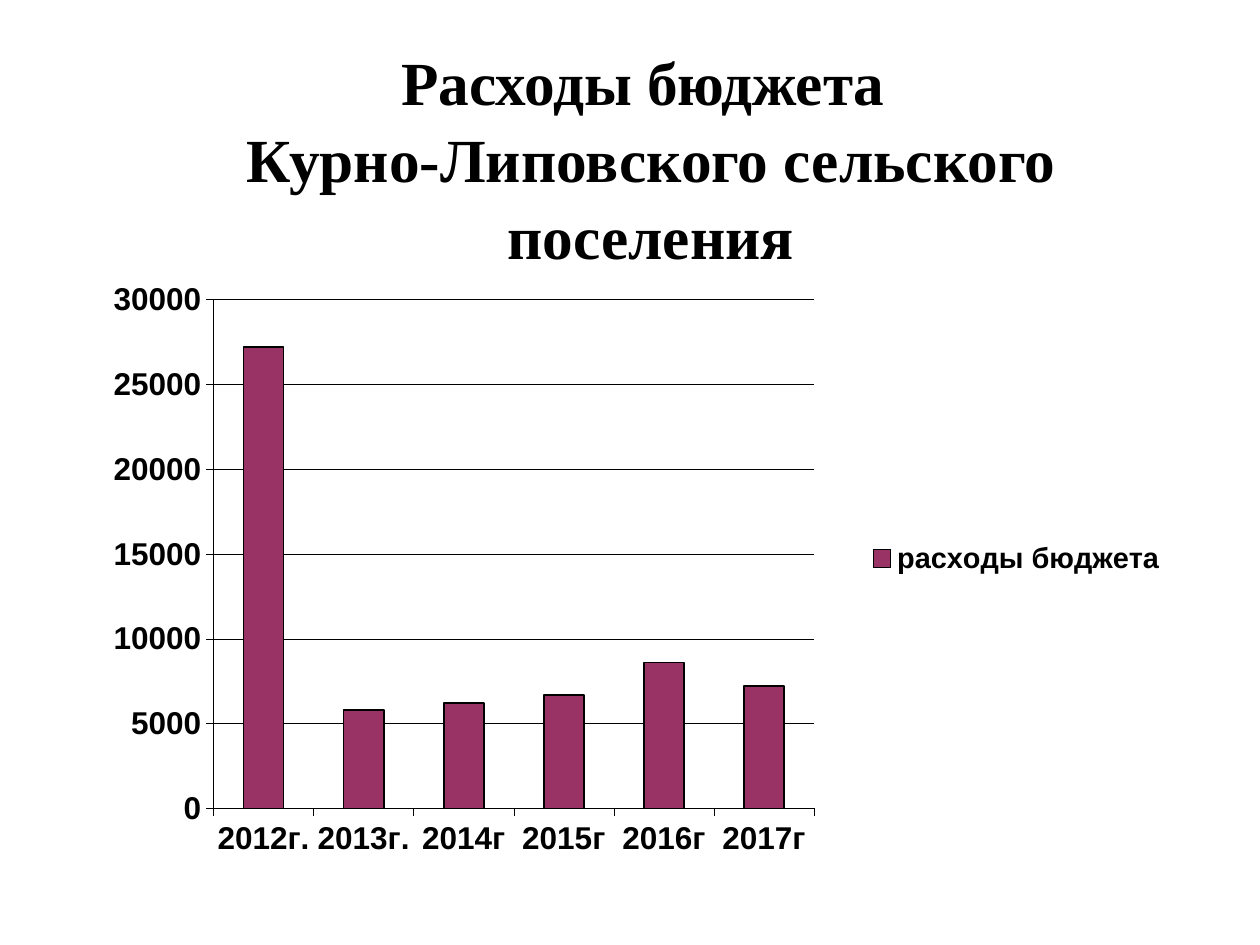
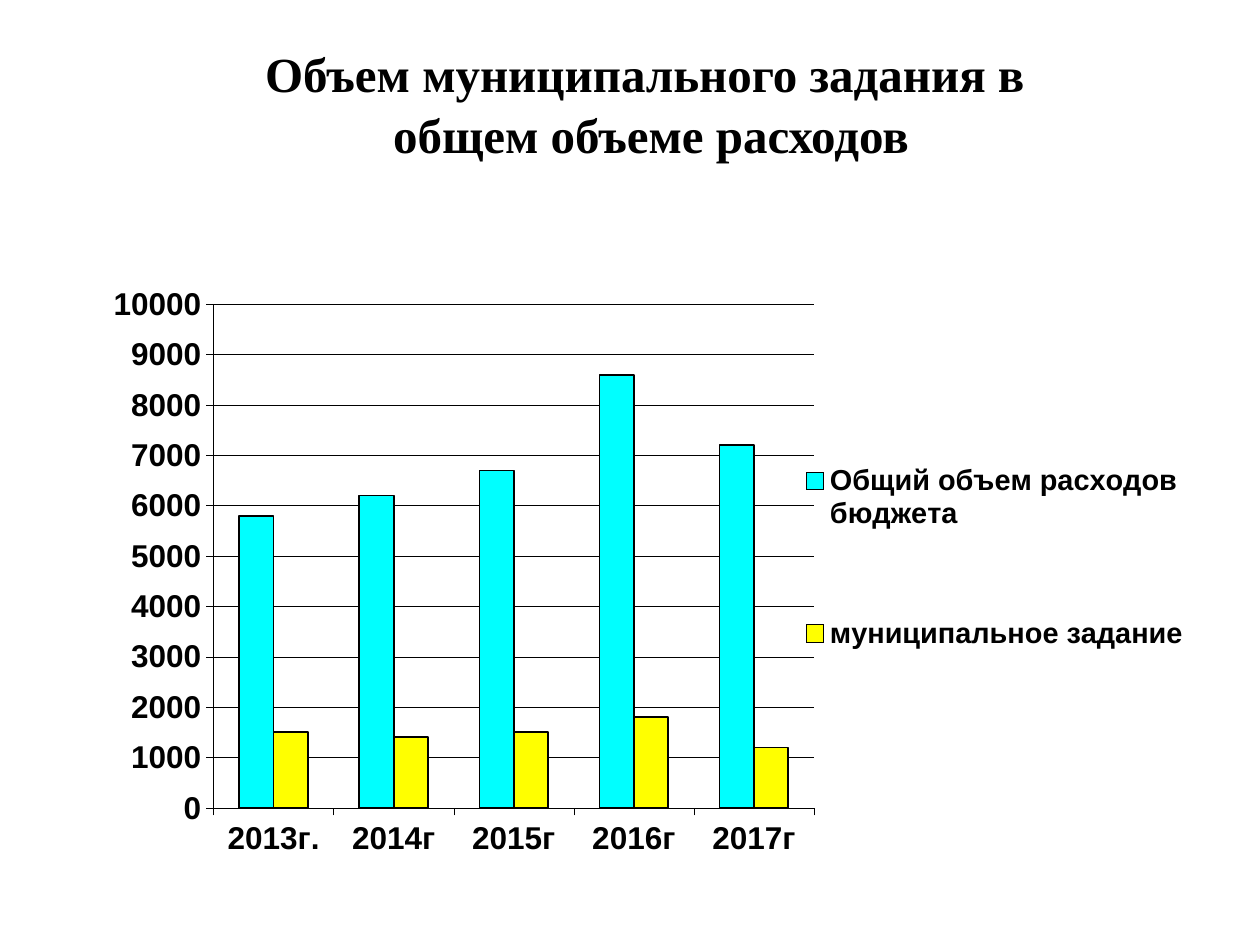
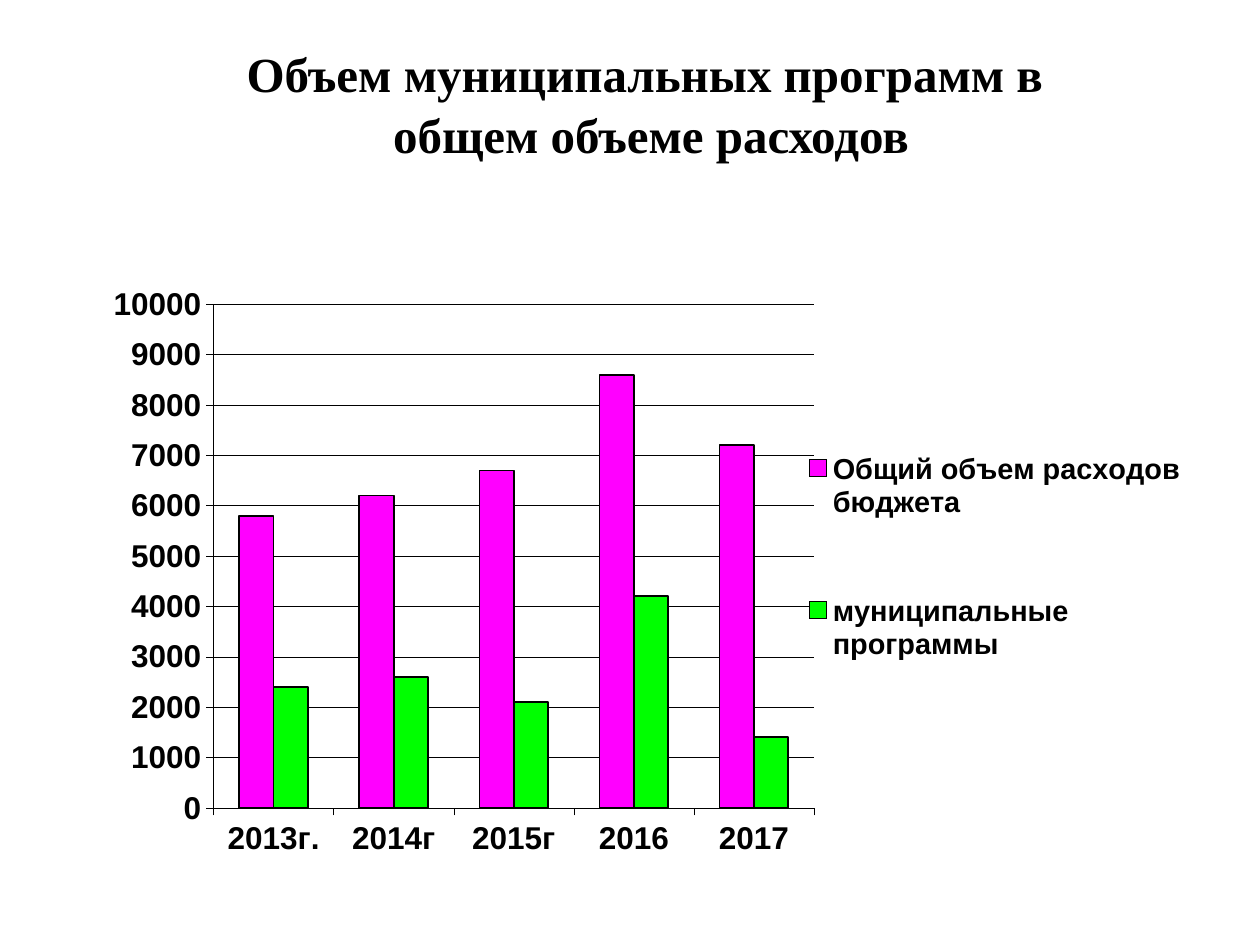
from pptx import Presentation
from pptx.chart.data import CategoryChartData as Data
from pptx.dml.color import RGBColor as Rgb
from pptx.enum.chart import (XL_CHART_TYPE as Kind, XL_LEGEND_POSITION as Side,
                             XL_TICK_LABEL_POSITION as Label, XL_TICK_MARK as Tick)
from pptx.enum.text import MSO_ANCHOR as Anchor, PP_ALIGN as Align
from pptx.oxml import parse_xml
from pptx.oxml.ns import nsdecls
from pptx.util import Pt

HUES = {"ink": "000000", "plum": "993366", "cyan": "00FFFF",
        "yellow": "FFFF00", "pink": "FF00FF", "green": "00FF00"}
HEAD, BODY = "Times New Roman", "Arial"
CHART = (46, 157.5, 639, 348.5)
TOTAL = ("Общий объем расходов бюджета", [5800, 6200, 6700, 8600, 7200])
PAIR = {"top": 10000, "step": 1000, "plot": (0.119, 0.047, 0.537, 0.826),
        "key": (0.645, 0.167, 0.345, 0.59)}

SLIDES = [
    {"title": ["Расходы бюджета ", "Курно-Липовского сельского поселения"],
     "size": 35, "height": 135,
     "cats": ["2012г.", "2013г.", "2014г", "2015г", "2016г", "2017г"],
     "rows": [("расходы бюджета", [27200, 5800, 6200, 6700, 8600, 7200], "plum")],
     "top": 30000, "step": 5000, "plot": (0.119, 0.039, 0.537, 0.835),
     "key": (0.697, 0.424, 0.28, 0.08)},
    {"title": ["Объем муниципального задания в ", "общем объеме расходов"],
     "size": 28, "height": 90,
     "cats": ["2013г.", "2014г", "2015г", "2016г", "2017г"],
     "rows": [(*TOTAL, "cyan"),
              ("муниципальное задание", [1500, 1400, 1500, 1800, 1200], "yellow")],
     **PAIR},
    {"title": ["Объем муниципальных программ в ", "общем объеме расходов"],
     "size": 28, "height": 90,
     "cats": ["2013г.", "2014г", "2015г", "2016", "2017"],
     "rows": [(*TOTAL, "pink"),
              ("муниципальные программы", [2400, 2600, 2100, 4200, 1400], "green")],
     **PAIR},
]


def hue(name):
    return Rgb.from_string(HUES[name])


def set_font(font, face, size):
    font.name, font.size, font.bold = face, Pt(size), True
    font.color.rgb = hue("ink")


def set_line(line, width):
    line.color.rgb = hue("ink")
    line.width = Pt(width)


def add_title(slide, box, lines, size):
    frame = slide.shapes.add_textbox(*map(Pt, box)).text_frame
    frame.word_wrap = True
    frame.vertical_anchor = Anchor.TOP
    frame.margin_left = frame.margin_right = Pt(9)
    frame.margin_top = Pt(5)
    for i, line in enumerate(lines):
        para = frame.paragraphs[0] if i == 0 else frame.add_paragraph()
        para.alignment = Align.CENTER
        para.line_spacing = 1.05
        run = para.add_run()
        run.text = line
        set_font(run.font, HEAD, size)


def make_layout(box, inner=False):
    """Return a manual layout; box holds fractions of the chart."""
    target = '<c:layoutTarget val="inner"/>' if inner else ""
    modes = "".join(f'<c:{a}Mode val="edge"/>' for a in "xy")
    sides = "".join(f'<c:{a} val="{v}"/>' for a, v in zip("xywh", box))
    return parse_xml(f'<c:layout {nsdecls("c")}><c:manualLayout>'
                     f'{target}{modes}{sides}</c:manualLayout></c:layout>')


def set_axis(axis):
    axis.major_tick_mark, axis.minor_tick_mark = Tick.OUTSIDE, Tick.NONE
    set_font(axis.tick_labels.font, BODY, 18)
    set_line(axis.format.line, 0.25)


def place_parts(chart, plot, key):
    """Fix the places of the plot area and the legend."""
    area = chart.element.xpath("c:chart/c:plotArea")[0]
    legend = chart.element.xpath("c:chart/c:legend")[0]
    for old in area.xpath("c:layout") + legend.xpath("c:layout"):
        old.getparent().remove(old)
    area.insert(0, make_layout(plot, inner=True))
    legend.xpath("c:legendPos")[0].addnext(make_layout(key))


def add_bars(slide, box, info):
    data = Data()
    data.categories = info["cats"]
    for name, vals, _ in info["rows"]:
        data.add_series(name, vals)
    chart = slide.shapes.add_chart(Kind.COLUMN_CLUSTERED, *map(Pt, box), data).chart
    chart.has_title = False
    set_font(chart.font, BODY, 18)
    plot = chart.plots[0]
    plot.gap_width, plot.overlap, plot.vary_by_categories = 150, 0, False
    for bars, (_, _, tint) in zip(plot.series, info["rows"]):
        bars.format.fill.solid()
        bars.format.fill.fore_color.rgb = hue(tint)
        bars.invert_if_negative = False
        set_line(bars.format.line, 1)
    cat, val = chart.category_axis, chart.value_axis
    set_axis(cat)
    set_axis(val)
    cat.tick_label_position = Label.LOW
    val.minimum_scale, val.maximum_scale = 0, info["top"]
    val.major_unit = info["step"]
    val.has_major_gridlines = True
    set_line(val.major_gridlines.format.line, 0.25)
    chart.has_legend = True
    chart.legend.position = Side.RIGHT
    chart.legend.include_in_layout = False
    set_font(chart.legend.font, BODY, 16.5)
    place_parts(chart, info["plot"], info["key"])


def main():
    deck = Presentation()
    deck.slide_width, deck.slide_height = Pt(720), Pt(540)
    for info in SLIDES:
        slide = deck.slides.add_slide(deck.slide_layouts[6])
        add_title(slide, (48, 18, 648, info["height"]), info["title"], info["size"])
        add_bars(slide, CHART, info)
    deck.save("out.pptx")


if __name__ == "__main__":
    main()
